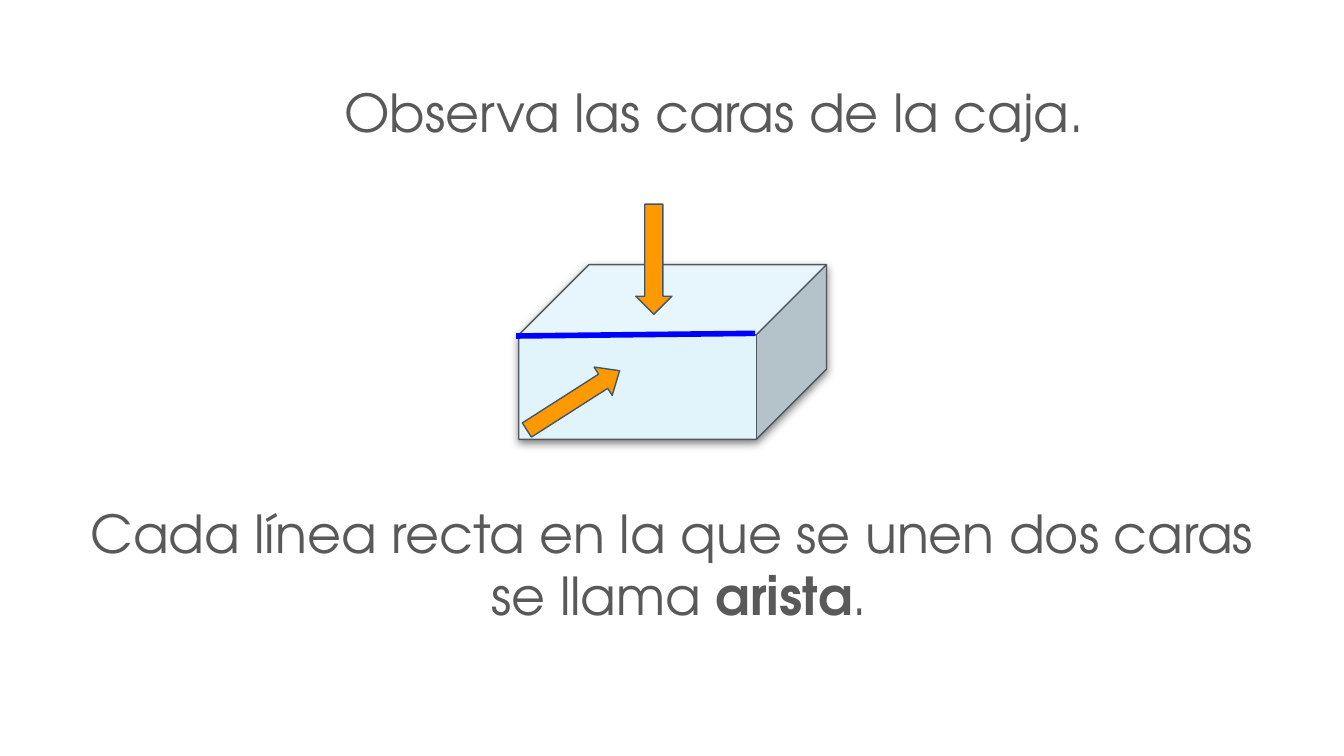
import lxml.etree
import pptx
import pptx.dml.color
import pptx.enum.shapes
import pptx.enum.text
import pptx.oxml.ns
import pptx.util

Pt = pptx.util.Pt
RGBColor = pptx.dml.color.RGBColor
SHAPE = pptx.enum.shapes.MSO_SHAPE
qn = pptx.oxml.ns.qn

GREY = RGBColor(0x59, 0x59, 0x59)
PALE_BLUE = RGBColor(0xE1, 0xF4, 0xFC)
SLATE = RGBColor(0x4F, 0x58, 0x5E)
BLUE = RGBColor(0x00, 0x00, 0xFF)
ORANGE = RGBColor(0xFF, 0x99, 0x00)
NAVY = RGBColor(0x44, 0x54, 0x6A)


def add_sentence(left, top, width, height, lines):
    """Add centred text; each line is a list of (words, bold) pairs."""
    box = slide.shapes.add_textbox(Pt(left), Pt(top), Pt(width), Pt(height))
    frame = box.text_frame
    frame.word_wrap = True
    frame.margin_left = frame.margin_right = Pt(5)
    frame.margin_top = frame.margin_bottom = Pt(2.7)
    frame.text = "\n".join("" for _ in lines)
    for paragraph, pieces in zip(frame.paragraphs, lines):
        paragraph.alignment = pptx.enum.text.PP_ALIGN.CENTER
        for words, bold in pieces:
            run = paragraph.add_run()
            run.text = words
            run.font.name = "TeX Gyre Adventor"
            run.font.size = Pt(28)
            run.font.bold = bold
            run.font.color.rgb = GREY


def add_solid(kind, left, top, width, height, adjustments, fill, outline):
    solid = slide.shapes.add_shape(kind, Pt(left), Pt(top), Pt(width), Pt(height))
    for index, value in enumerate(adjustments):
        solid.adjustments[index] = value
    solid.fill.solid()
    solid.fill.fore_color.rgb = fill
    solid.line.color.rgb = outline
    solid.line.width = Pt(0.75)
    solid.shadow.inherit = False
    return solid


presentation = pptx.Presentation()
presentation.slide_width = Pt(720)
presentation.slide_height = Pt(405)
slide = presentation.slides.add_slide(presentation.slide_layouts[6])

add_sentence(111.6, 40.3, 542.2, 56.2, [[("Observa las caras de la caja.", False)]])

# Box with a soft shadow below it
cuboid = add_solid(SHAPE.CUBE, 277.9, 141.8, 164.9, 93.6, [0.402], PALE_BLUE, SLATE)
effects = cuboid._element.spPr.find(qn("a:effectLst"))
shadow = lxml.etree.SubElement(
    effects, qn("a:outerShdw"), blurRad=str(Pt(4.5)), dist=str(Pt(1.5)),
    dir="5400000", algn="bl", rotWithShape="0")
shade = lxml.etree.SubElement(shadow, qn("a:srgbClr"), val="000000")
lxml.etree.SubElement(shade, qn("a:alpha"), val="49000")

add_sentence(41.8, 265.7, 636.5, 73.4, [
    [("Cada línea recta en la que se unen dos caras", False)],
    [(" se llama ", False), ("arista", True), (".", False)],
])

# Highlighted edge between the two faces
edge = slide.shapes.add_connector(
    pptx.enum.shapes.MSO_CONNECTOR.STRAIGHT, Pt(276.5), Pt(180), Pt(404.6), Pt(178.6))
edge.line.color.rgb = BLUE
edge.line.width = Pt(3)
lxml.etree.SubElement(edge._element.spPr, qn("a:effectLst"))

# Arrows to the top and front faces
for left, top, width, head, angle in [
    (340.6, 109.4, 19.4, 0.5, 0),
    (298.1, 185, 18, 0.58, 237.4),
]:
    arrow = add_solid(SHAPE.DOWN_ARROW, left, top, width, 59, [0.5, head], ORANGE, NAVY)
    arrow.rotation = angle

presentation.save("out.pptx")
